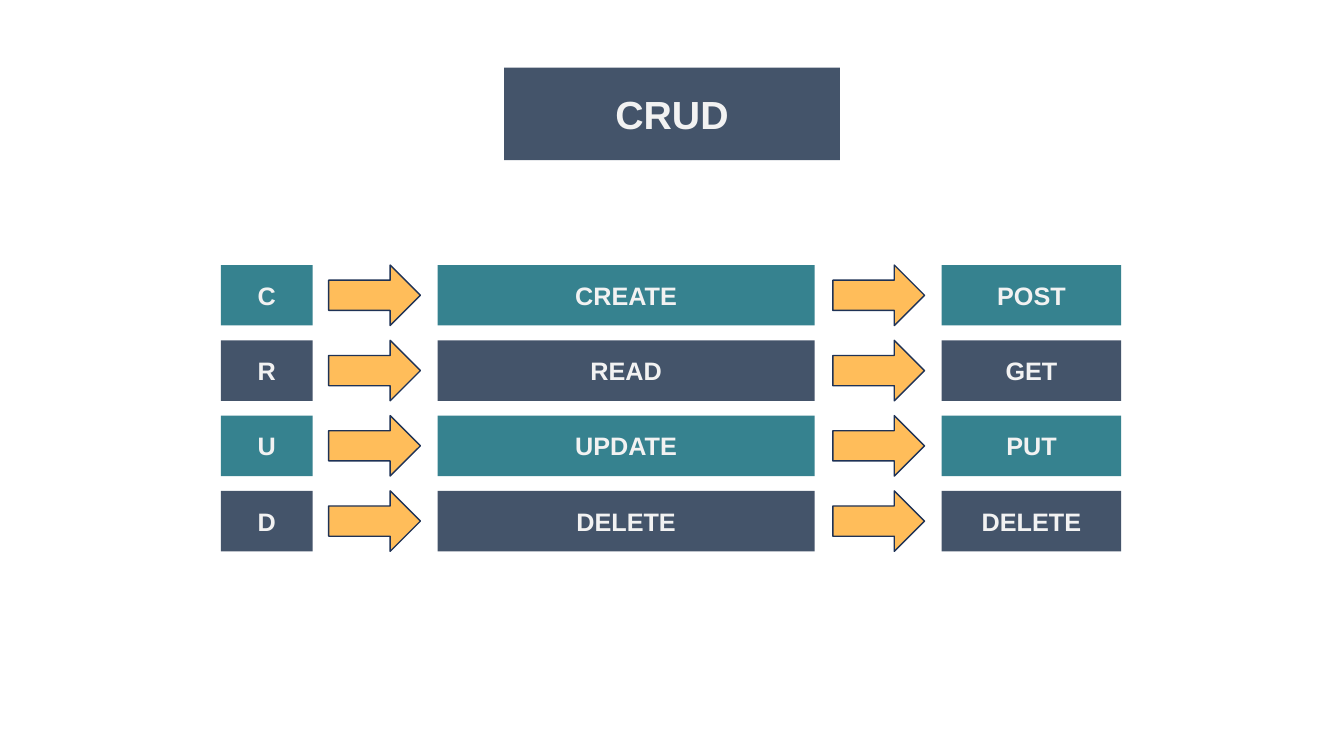
from dataclasses import dataclass

from pptx import Presentation
from pptx.dml.color import RGBColor
from pptx.enum.shapes import MSO_SHAPE
from pptx.enum.text import MSO_ANCHOR, PP_ALIGN
from pptx.util import Inches, Pt

RECT = MSO_SHAPE.RECTANGLE
ARROW = MSO_SHAPE.RIGHT_ARROW
MIDDLE = MSO_ANCHOR.MIDDLE
CENTER = PP_ALIGN.CENTER


@dataclass(frozen=True)
class Theme:
    """Colours, font and type sizes of the slide."""
    navy: str = "44546A"
    teal: str = "36828F"
    amber: str = "FFBD5A"
    outline: str = "1E3256"
    text: str = "F2F2F2"
    font: str = "Arial"
    title_size: int = 28
    label_size: int = 18


THEME = Theme()
OPERATIONS = [
    ("C", "CREATE", "POST"),
    ("R", "READ", "GET"),
    ("U", "UPDATE", "PUT"),
    ("D", "DELETE", "DELETE"),
]
LABEL_COLUMNS = [(0, 0.91), (2.15, 3.74), (7.15, 1.78)]
ARROW_COLUMNS = [(1.07, 0.91), (6.07, 0.91)]
ROW_HEIGHT = 0.6


def add_filled(slide, kind, box, fill):
    """Add a shape with a plain fill and no shadow."""
    sp = slide.shapes.add_shape(kind, *(Inches(v) for v in box))
    sp.shadow.inherit = False
    sp.fill.solid()
    sp.fill.fore_color.rgb = RGBColor.from_string(fill)
    return sp


def add_label(slide, box, text, fill, size):
    """Add a borderless rectangle with centred bold text."""
    sp = add_filled(slide, RECT, box, fill)
    sp.line.fill.background()
    tf = sp.text_frame
    tf.text = text
    tf.word_wrap = True
    tf.vertical_anchor = MIDDLE
    p = tf.paragraphs[0]
    p.alignment = CENTER
    font = p.runs[0].font
    font.name = THEME.font
    font.size = Pt(size)
    font.bold = True
    font.color.rgb = RGBColor.from_string(THEME.text)


def add_arrow(slide, box):
    """Add an outlined arrow pointing right."""
    sp = add_filled(slide, ARROW, box, THEME.amber)
    sp.line.color.rgb = RGBColor.from_string(THEME.outline)
    sp.line.width = Pt(1)


def add_operations(slide, box):
    """Add one row per operation, with arrows between its labels."""
    left, top, _, height = box
    pitch = (height - ROW_HEIGHT) / (len(OPERATIONS) - 1)
    for i, labels in enumerate(OPERATIONS):
        y = top + i * pitch
        fill = THEME.navy if i % 2 else THEME.teal
        for text, (x, width) in zip(labels, LABEL_COLUMNS):
            add_label(slide, (left + x, y, width, ROW_HEIGHT), text, fill,
                      THEME.label_size)
        for x, width in ARROW_COLUMNS:
            add_arrow(slide, (left + x, y, width, ROW_HEIGHT))


def main():
    """Build the slide and save it."""
    prs = Presentation()
    prs.slide_width = Inches(13.33)
    prs.slide_height = Inches(7.5)
    slide = prs.slides.add_slide(prs.slide_layouts[6])
    add_label(slide, (5, 0.67, 3.33, 0.92), "CRUD", THEME.navy,
              THEME.title_size)
    add_operations(slide, (2.19, 2.63, 8.93, 2.84))
    prs.save("out.pptx")


if __name__ == "__main__":
    main()
